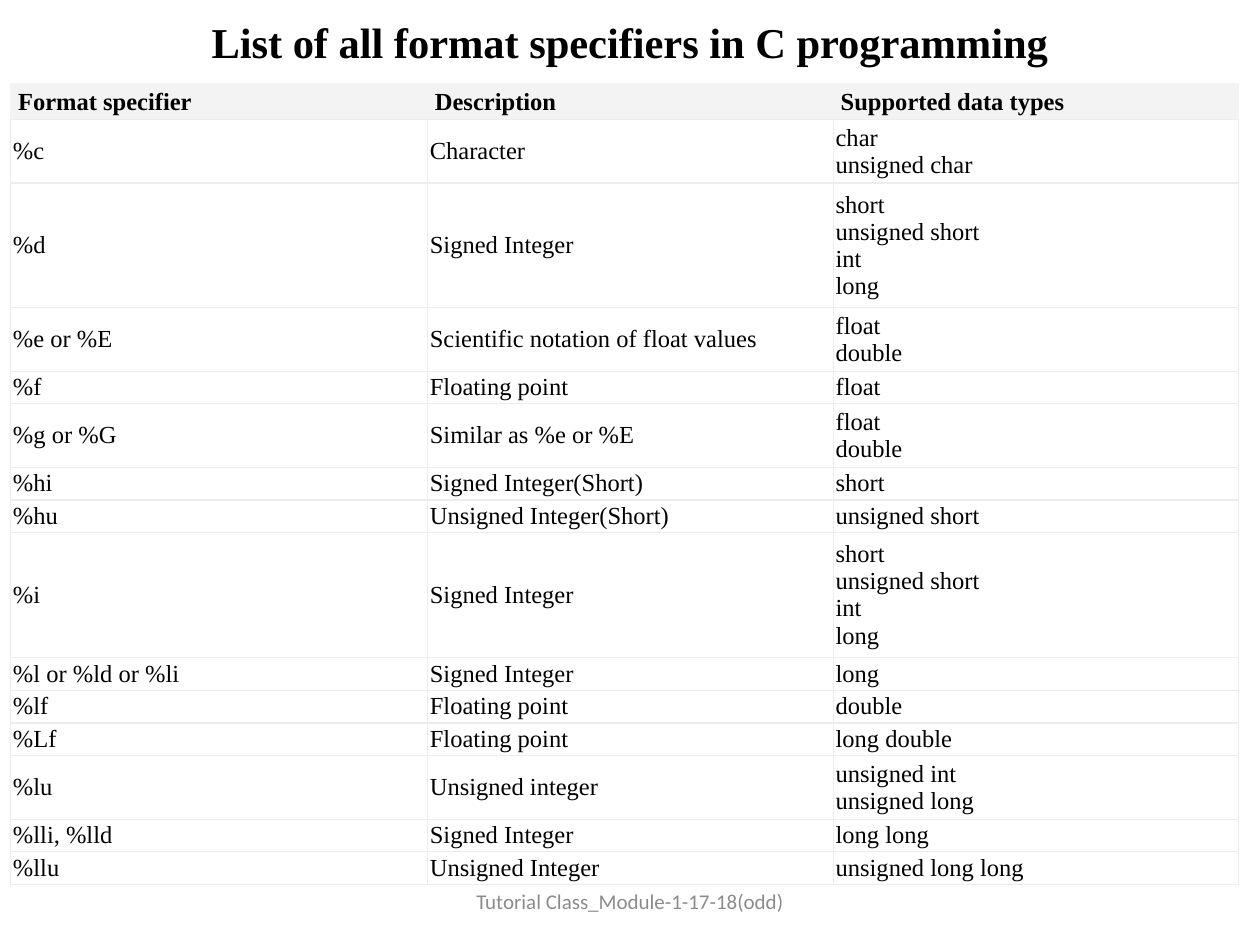
import pptx
import pptx.util
import pptx.dml.color
import pptx.enum.text
import pptx.oxml.ns
from lxml import etree

BLACK = pptx.dml.color.RGBColor(0x00, 0x00, 0x00)
WHITE = pptx.dml.color.RGBColor(0xFF, 0xFF, 0xFF)
GRAY = pptx.dml.color.RGBColor(0x8C, 0x8C, 0x8C)
HEADER_FILL = pptx.dml.color.RGBColor(0xF3, 0xF3, 0xF3)
RULE = pptx.dml.color.RGBColor(0xED, 0xED, 0xED)

GRID_COLUMNS, GRID_ROWS = 120, 90
COLUMN_SPANS = (39.7, 38.65, 38.65)
HEADER_SPAN, LINE_SPAN, EXTRA_LINE_SPAN = 3.4, 3.12, 2.92
HEADER_INSETS = (0.06, 0.02, 0.06, 0.02)
BODY_INSETS = (0.02, 0.01, 0.04, 0.01)

HEADINGS = ("Format specifier", "Description", "Supported data types")
SPECIFIERS = (
    ("%c", "Character", "char\nunsigned char"),
    ("%d", "Signed Integer", "short\nunsigned short\nint\nlong"),
    ("%e or %E", "Scientific notation of float values", "float\ndouble"),
    ("%f", "Floating point", "float"),
    ("%g or %G", "Similar as %e or %E", "float\ndouble"),
    ("%hi", "Signed Integer(Short)", "short"),
    ("%hu", "Unsigned Integer(Short)", "unsigned short"),
    ("%i", "Signed Integer", "short\nunsigned short\nint\nlong"),
    ("%l or %ld or %li", "Signed Integer", "long"),
    ("%lf", "Floating point", "double"),
    ("%Lf", "Floating point", "long double"),
    ("%lu", "Unsigned integer", "unsigned int\nunsigned long"),
    ("%lli, %lld", "Signed Integer", "long long"),
    ("%llu", "Unsigned Integer", "unsigned long long"),
)


def write(frame, text, size=14, font="Times New Roman", color=BLACK, bold=False, align=None):
    para = frame.paragraphs[0]
    para.text = text.replace("\n", "\v")
    para.alignment = align
    for span in para.runs:
        span.font.size = pptx.util.Pt(size)
        span.font.name = font
        span.font.color.rgb = color
        span.font.bold = bold
    for line_break in para._p.findall(pptx.oxml.ns.qn("a:br")):
        etree.SubElement(line_break, pptx.oxml.ns.qn("a:rPr"), sz=str(size * 100))


class SlideBuilder:
    def __init__(self, deck):
        self.column = deck.slide_width / GRID_COLUMNS
        self.row = deck.slide_height / GRID_ROWS
        self.page = deck.slides.add_slide(deck.slide_layouts[6])

    def across(self, columns):
        return round(self.column * columns)

    def down(self, rows):
        return round(self.row * rows)

    def text(self, text, left, top, width, height, **style):
        box = self.page.shapes.add_textbox(
            self.across(left), self.down(top), self.across(width), self.down(height))
        frame = box.text_frame
        frame.word_wrap = True
        frame.vertical_anchor = pptx.enum.text.MSO_ANCHOR.MIDDLE
        write(frame, text, align=pptx.enum.text.PP_ALIGN.CENTER, **style)

    def border(self, cell, side, color):
        properties = cell._tc.get_or_add_tcPr()
        line = etree.SubElement(properties, pptx.oxml.ns.qn(f"a:ln{side}"),
                                w=str(pptx.util.Pt(0.75)))
        fill = etree.SubElement(line, pptx.oxml.ns.qn("a:solidFill"))
        etree.SubElement(fill, pptx.oxml.ns.qn("a:srgbClr"), val=str(color))

    def cell(self, cell, text, header):
        for side in "LRTB":
            self.border(cell, side, HEADER_FILL if header and side != "B" else RULE)
        cell.fill.solid()
        cell.fill.fore_color.rgb = HEADER_FILL if header else WHITE
        cell.vertical_anchor = pptx.enum.text.MSO_ANCHOR.MIDDLE
        insets = HEADER_INSETS if header else BODY_INSETS
        cell.margin_left, cell.margin_top, cell.margin_right, cell.margin_bottom = (
            pptx.util.Inches(inset) for inset in insets)
        write(cell.text_frame, text, bold=header)

    def table(self, headings, records, left, top):
        heights = [HEADER_SPAN] + [
            LINE_SPAN + EXTRA_LINE_SPAN * record[-1].count("\n") for record in records]
        table = self.page.shapes.add_table(
            len(heights), len(headings), self.across(left), self.down(top),
            self.across(sum(COLUMN_SPANS)), self.down(sum(heights))).table
        for column, span in zip(table.columns, COLUMN_SPANS):
            column.width = self.across(span)
        for index, (row, height, record) in enumerate(
                zip(table.rows, heights, (headings, *records))):
            row.height = self.down(height)
            for cell, text in zip(row.cells, record):
                self.cell(cell, text, header=index == 0)


def main():
    deck = pptx.Presentation()
    deck.slide_width = pptx.util.Inches(10)
    deck.slide_height = pptx.util.Inches(7.5)
    builder = SlideBuilder(deck)
    builder.text("List of all format specifiers in C programming", 6, 1, 108, 6,
                 size=24.3, bold=True)
    builder.table(HEADINGS, SPECIFIERS, 1, 8)
    builder.text("Tutorial Class_Module-1-17-18(odd)", 41, 83.4, 38, 4.8,
                 size=12, font="Calibri", color=GRAY)
    deck.save("out.pptx")


if __name__ == "__main__":
    main()
